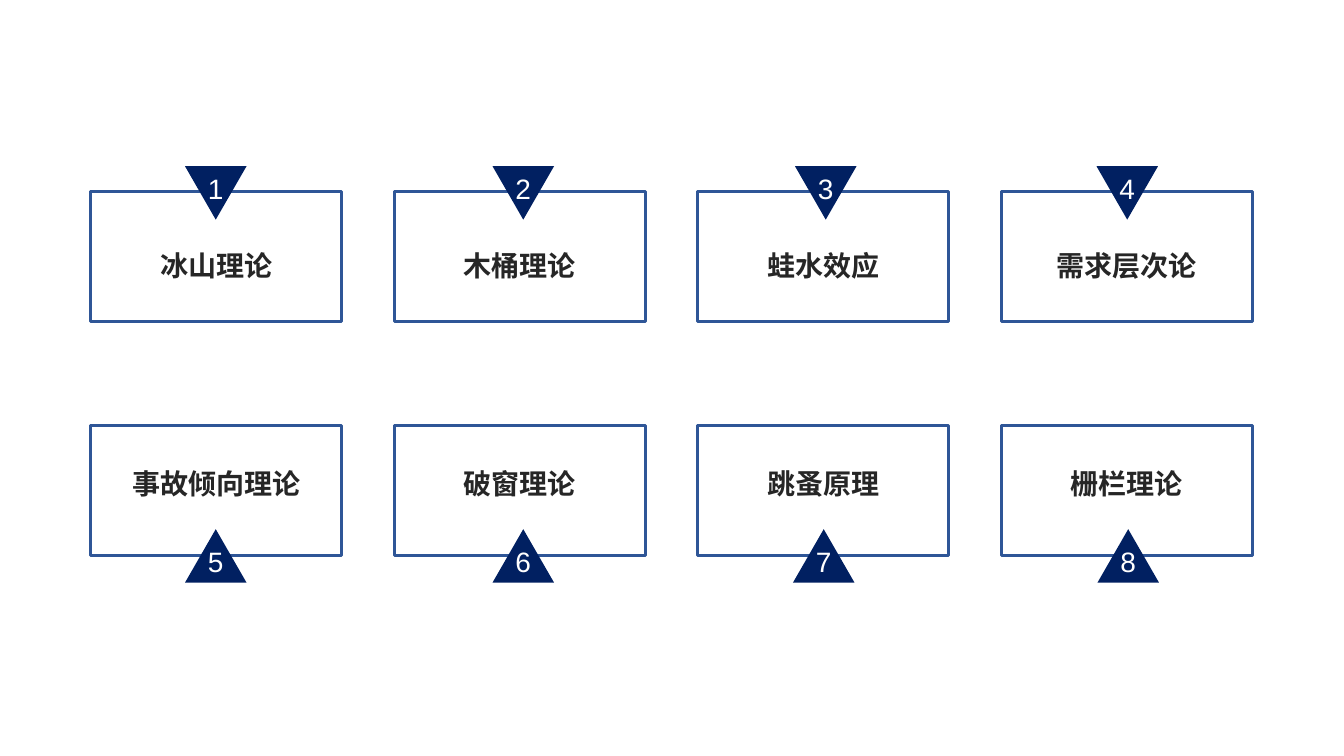
from dataclasses import dataclass

from lxml.etree import SubElement
from pptx import Presentation
from pptx.dml.color import RGBColor
from pptx.enum.shapes import MSO_SHAPE as Shape
from pptx.enum.text import MSO_AUTO_SIZE as AutoSize, PP_ALIGN as Align
from pptx.oxml.ns import qn
from pptx.util import Inches, Pt

ROWS = [
    dict(theories=["冰山理论", "木桶理论", "蛙水效应", "需求层次论"],
         card_top=1.9, label_top=2.42, marker_top=1.65, number_top=1.65,
         marker_centers=[2.14, 5.19, 8.19, 11.18], flipped=True),
    dict(theories=["事故倾向理论", "破窗理论", "跳蚤原理", "栅栏理论"],
         card_top=4.22, label_top=4.58, marker_top=5.25, number_top=5.35,
         marker_centers=[2.14, 5.19, 8.17, 11.19], flipped=False),
]


@dataclass(frozen=True)
class Theme:
    border: str = "2F5697"
    marker: str = "012061"
    number: str = "FFFFFF"
    label: str = "262626"
    number_font: str = "Arial"
    label_font: str = "Noto Sans CJK SC"
    size: int = 20
    border_width: int = 2


THEME = Theme()
SLIDE_W, SLIDE_H = 13.33, 7.5
CARD_LEFT, CARD_PITCH = 0.9, 3.01
CARD_W, CARD_H = 2.49, 1.29
MARKER_W, MARKER_H = 0.61, 0.53
NUMBER_W, TEXT_H = 0.49, 0.44
CHAR_W, LABEL_PADDING = 0.28, 0.2


def add_outline(s, kind, center, top, width, height):
    sp = s.shapes.add_shape(kind, *map(Inches, (center - width / 2, top, width, height)))
    sp.shadow.inherit = False
    return sp


def add_card(s, center, top):
    sp = add_outline(s, Shape.RECTANGLE, center, top, CARD_W, CARD_H)
    sp.fill.background()
    sp.line.color.rgb = RGBColor.from_string(THEME.border)
    sp.line.width = Pt(THEME.border_width)


def add_marker(s, center, top, flipped):
    sp = add_outline(s, Shape.ISOSCELES_TRIANGLE, center, top, MARKER_W, MARKER_H)
    sp.fill.solid()
    sp.fill.fore_color.rgb = RGBColor.from_string(THEME.marker)
    sp.line.fill.background()
    if flipped:
        sp.element.spPr.find(qn("a:xfrm")).set("flipV", "1")


def add_text(s, text, center, top, width, color, font, bold, wrap):
    sp = s.shapes.add_textbox(*map(Inches, (center - width / 2, top, width, TEXT_H)))
    tf = sp.text_frame
    tf.word_wrap = wrap
    tf.auto_size = AutoSize.SHAPE_TO_FIT_TEXT
    p = tf.paragraphs[0]
    p.alignment = Align.CENTER
    r = p.add_run()
    r.text = text
    for name, value in dict(size=Pt(THEME.size), bold=bold, name=font).items():
        setattr(r.font, name, value)
    r.font.color.rgb = RGBColor.from_string(color)
    SubElement(r.font._element, qn("a:ea")).set("typeface", font)


def main():
    prs = Presentation()
    prs.slide_width, prs.slide_height = Inches(SLIDE_W), Inches(SLIDE_H)
    s = prs.slides.add_slide(prs.slide_layouts[6])
    number = 0
    for row in ROWS:
        for col, theory in enumerate(row["theories"]):
            number += 1
            center = CARD_LEFT + col * CARD_PITCH + CARD_W / 2
            marker_center = row["marker_centers"][col]
            add_card(s, center, row["card_top"])
            add_marker(s, marker_center, row["marker_top"], row["flipped"])
            add_text(s, str(number), marker_center, row["number_top"], NUMBER_W,
                     THEME.number, THEME.number_font, False, True)
            add_text(s, theory, center, row["label_top"],
                     len(theory) * CHAR_W + LABEL_PADDING,
                     THEME.label, THEME.label_font, True, False)
    prs.save("out.pptx")


if __name__ == "__main__":
    main()
